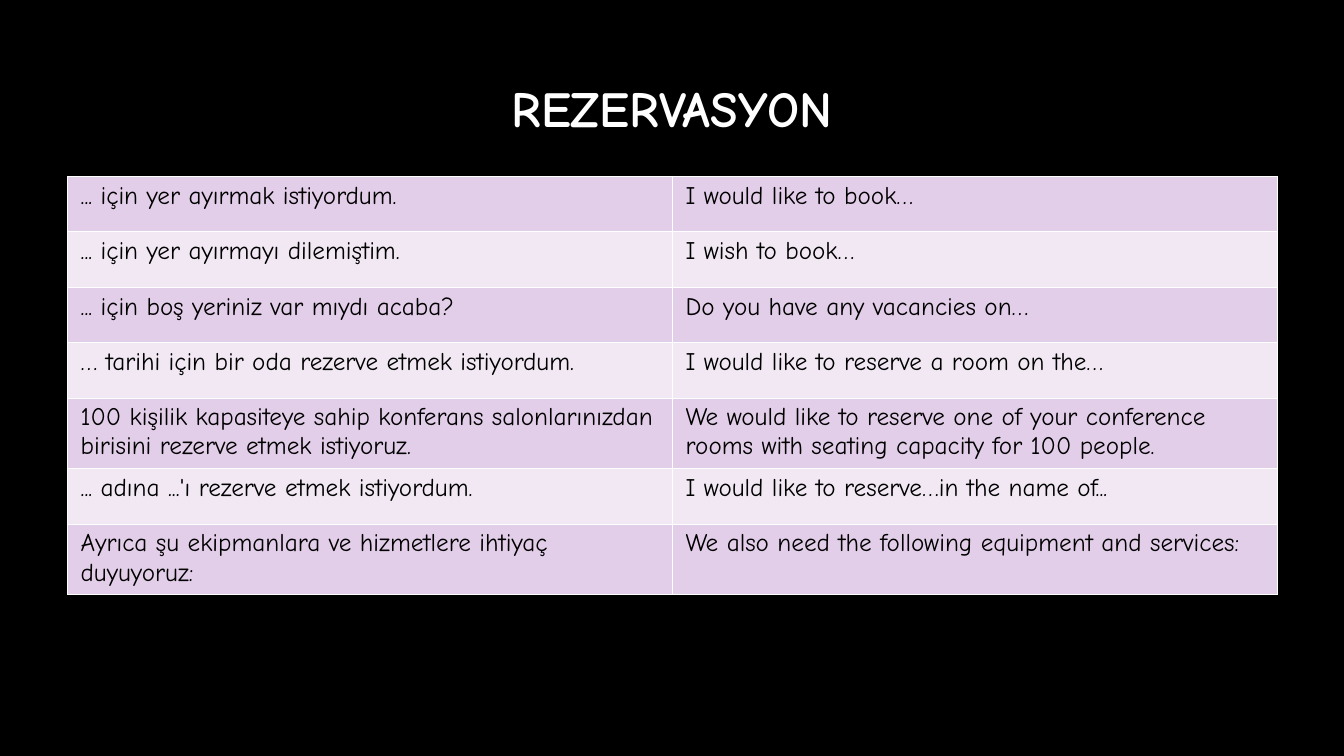
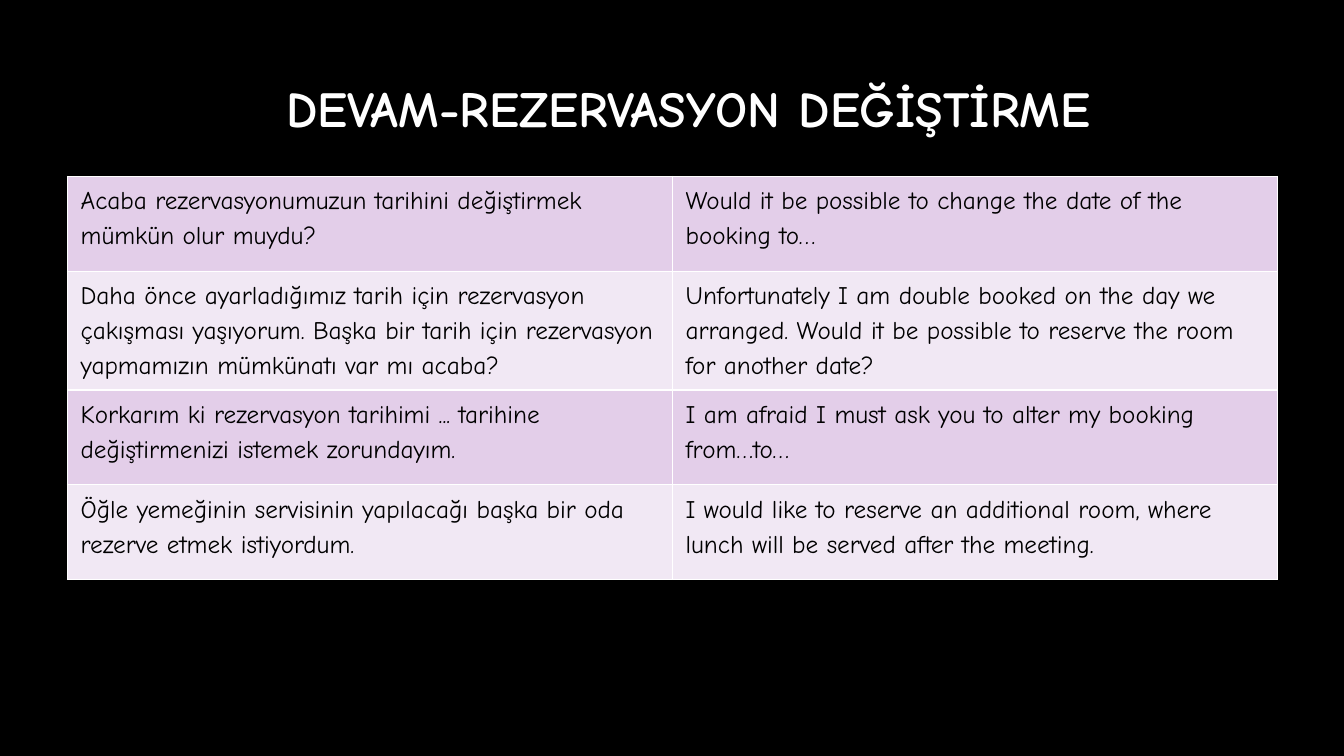
"""Build two slides of reservation phrases in Turkish and English."""
from dataclasses import dataclass

from lxml import etree
from pptx import Presentation
from pptx import util as u
from pptx.dml.color import RGBColor
from pptx.enum import text
from pptx.oxml import ns

FONT = "Comic Neue"
BLACK = RGBColor(0x00, 0x00, 0x00)
WHITE = RGBColor(0xFF, 0xFF, 0xFF)
BANDS = (RGBColor(0xE3, 0xCE, 0xE9), RGBColor(0xF1, 0xE8, 0xF4))
BORDER_WIDTH = u.Pt(1)
TABLE_LEFT, TABLE_TOP = u.Inches(0.67), u.Inches(1.75)
COLUMN_WIDTH = u.Inches(6)


@dataclass(frozen=True)
class PhrasePage:
    """A title, its place and the phrase pairs below it."""

    title: str
    title_left: float
    title_top: float
    title_height: float
    row_height: float
    line_spacing: float
    phrases: tuple[tuple[str, str], ...]


PAGES = (
    PhrasePage("REZERVASYON", 2.44, 0.52, 1.1, 0.55, 1.0, (
        ("... için yer ayırmak istiyordum.", "I would like to book…"),
        ("... için yer ayırmayı dilemiştim.", "I wish to book…"),
        ("... için boş yeriniz var mıydı acaba?", "Do you have any vacancies on…"),
        ("… tarihi için bir oda rezerve etmek istiyordum.",
         "I would like to reserve a room on the…"),
        ("100 kişilik kapasiteye sahip konferans salonlarınızdan birisini rezerve etmek istiyoruz.",
         "We would like to reserve one of your conference rooms with seating capacity for 100 people."),
        ("... adına ...'ı rezerve etmek istiyordum.",
         "I would like to reserve…in the name of..."),
        ("Ayrıca şu ekipmanlara ve hizmetlere ihtiyaç duyuyoruz:",
         "We also need the following equipment and services:"),
    )),
    PhrasePage("DEVAM-REZERVASYON DEĞİŞTİRME", 2.6, 0.42, 1.3, 0.94, 1.2, (
        ("Acaba rezervasyonumuzun tarihini değiştirmek mümkün olur muydu?",
         "Would it be possible to change the date of the booking to…"),
        ("Daha önce ayarladığımız tarih için rezervasyon çakışması yaşıyorum. "
         "Başka bir tarih için rezervasyon yapmamızın mümkünatı var mı acaba?",
         "Unfortunately I am double booked on the day we arranged. "
         "Would it be possible to reserve the room for another date?"),
        ("Korkarım ki rezervasyon tarihimi ... tarihine değiştirmenizi istemek zorundayım.",
         "I am afraid I must ask you to alter my booking from…to…"),
        ("Öğle yemeğinin servisinin yapılacağı başka bir oda rezerve etmek istiyordum.",
         "I would like to reserve an additional room, where lunch will be served after the meeting."),
    )),
)


def style_paragraph(para, size: int, color: RGBColor, bold: bool = False) -> None:
    """Set the font of a whole paragraph."""
    para.font.name = FONT
    para.font.size = u.Pt(size)
    para.font.bold = bold
    para.font.color.rgb = color


def add_title(slide, page: PhrasePage) -> None:
    """Add the centred title."""
    box = slide.shapes.add_textbox(
        u.Inches(page.title_left), u.Inches(page.title_top),
        u.Inches(8.45), u.Inches(page.title_height))
    frame = box.text_frame
    frame.word_wrap = True
    frame.vertical_anchor = text.MSO_ANCHOR.MIDDLE
    para = frame.paragraphs[0]
    para.text = page.title
    para.alignment = text.PP_ALIGN.CENTER
    style_paragraph(para, 36, WHITE, bold=True)


def add_borders(cell) -> None:
    """Draw a white line on each side of a cell."""
    properties = cell._tc.get_or_add_tcPr()
    for side in ("lnL", "lnR", "lnT", "lnB"):
        line = etree.SubElement(properties, ns.qn(f"a:{side}"), w=str(BORDER_WIDTH))
        fill = etree.SubElement(line, ns.qn("a:solidFill"))
        etree.SubElement(fill, ns.qn("a:srgbClr"), val=str(WHITE))


def fill_cell(cell, phrase: str, band: RGBColor, line_spacing: float) -> None:
    """Write a phrase in a bordered cell with a band colour."""
    add_borders(cell)
    cell.fill.solid()
    cell.fill.fore_color.rgb = band
    cell.margin_left = cell.margin_right = u.Inches(0.13)
    cell.margin_top = cell.margin_bottom = u.Inches(0.05)
    para = cell.text_frame.paragraphs[0]
    para.text = phrase
    para.line_spacing = line_spacing
    style_paragraph(para, 18, BLACK)


def add_phrase_table(slide, page: PhrasePage) -> None:
    """Add the two-column table of phrases."""
    count = len(page.phrases)
    table = slide.shapes.add_table(
        count, 2, TABLE_LEFT, TABLE_TOP,
        2 * COLUMN_WIDTH, u.Inches(page.row_height * count)).table
    table.first_row = False
    table.horz_banding = False
    for row_index, pair in enumerate(page.phrases):
        for column_index, phrase in enumerate(pair):
            fill_cell(table.cell(row_index, column_index), phrase,
                      BANDS[row_index % 2], page.line_spacing)


def main() -> None:
    """Build and save the deck."""
    deck = Presentation()
    deck.slide_width, deck.slide_height = u.Inches(13.33), u.Inches(7.5)
    background = deck.slide_master.background.fill
    background.solid()
    background.fore_color.rgb = BLACK
    for page in PAGES:
        slide = deck.slides.add_slide(deck.slide_layouts[6])
        add_title(slide, page)
        add_phrase_table(slide, page)
    deck.save("out.pptx")


if __name__ == "__main__":
    main()
